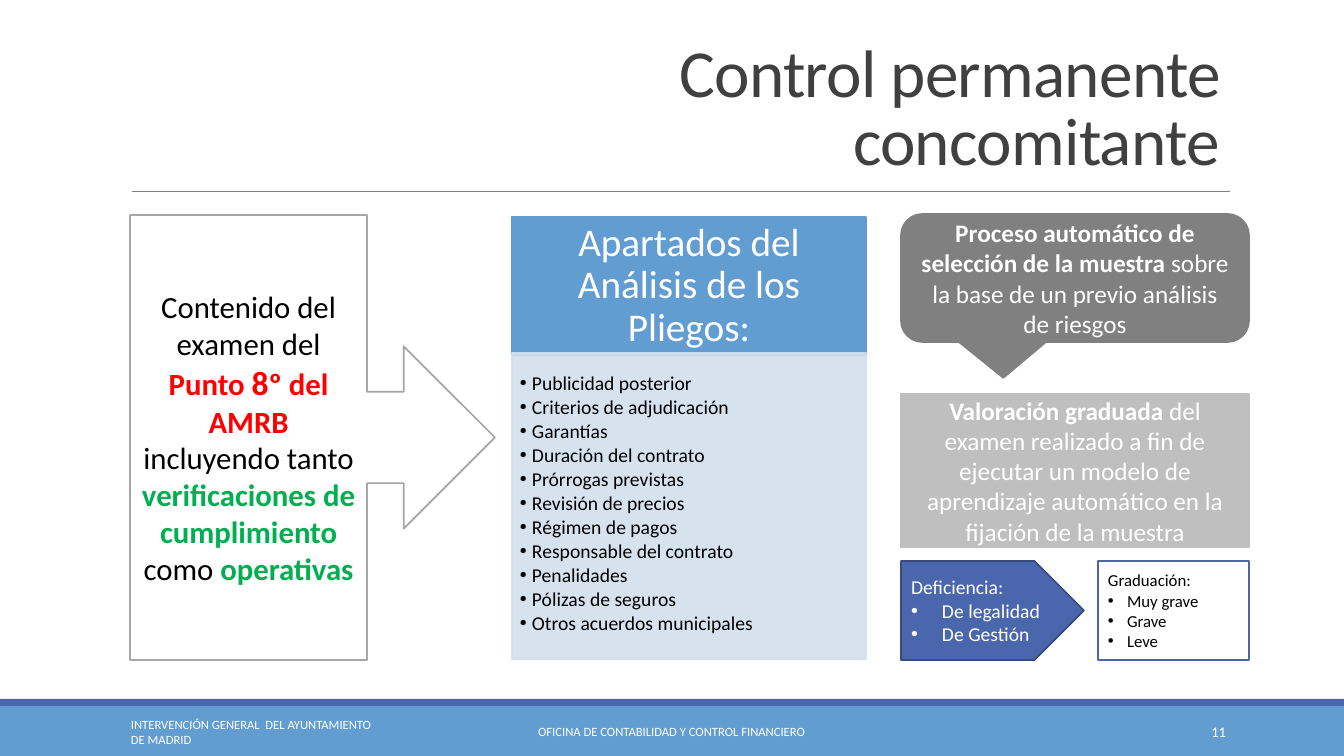
from pptx import Presentation
from pptx.dml.color import RGBColor
from pptx.enum.shapes import MSO_CONNECTOR, MSO_SHAPE
from pptx.enum.text import MSO_ANCHOR, PP_ALIGN
from pptx.oxml.ns import qn
from pptx.util import Pt
from lxml.etree import SubElement

PX = 914400 / 100.8
WIDTH, HEIGHT = 1344, 756

WHITE = RGBColor(0xFF, 0xFF, 0xFF)
BLACK = RGBColor(0, 0, 0)
INK = RGBColor(0x40, 0x40, 0x40)
GREY = RGBColor(0x80, 0x80, 0x80)
MID_GREY = RGBColor(0xA6, 0xA6, 0xA6)
LIGHT_GREY = RGBColor(0xBF, 0xBF, 0xBF)
SKY = RGBColor(0x62, 0x9D, 0xD1)
PALE = RGBColor(0xD3, 0xDF, 0xEE)
INDIGO = RGBColor(0x4A, 0x66, 0xAC)
NAVY = RGBColor(0x37, 0x4B, 0x7F)
RED = RGBColor(0xFF, 0, 0)
GREEN = RGBColor(0, 0xB0, 0x50)

SECTIONS = [
    "Publicidad posterior", "Criterios de adjudicación", "Garantías",
    "Duración del contrato", "Prórrogas previstas", "Revisión de precios",
    "Régimen de pagos", "Responsable del contrato", "Penalidades",
    "Pólizas de seguros", "Otros acuerdos municipales",
]


def emu(*lengths):
    return [round(length * PX) for length in lengths]


def write(shape, paragraphs, size, color=BLACK, align=PP_ALIGN.CENTER, insets=(10, 5, 10, 5),
          spacing=None, after=0, indent=0, first_bullet=0, tracking=0):
    """Each paragraph is a string or a list of (text, run format) pairs."""
    frame = shape.text_frame
    frame.word_wrap = True
    frame.vertical_anchor = MSO_ANCHOR.MIDDLE
    (frame.margin_left, frame.margin_top,
     frame.margin_right, frame.margin_bottom) = emu(*insets)
    for number, runs in enumerate(paragraphs):
        paragraph = frame.paragraphs[0] if number == 0 else frame.add_paragraph()
        paragraph.alignment = align
        paragraph.space_after = Pt(after)
        if spacing:
            paragraph.line_spacing = spacing
        if indent and number >= first_bullet:
            properties = paragraph._p.get_or_add_pPr()
            hang = emu(indent)[0]
            properties.set("marL", str(hang))
            properties.set("indent", str(-hang))
            SubElement(properties, qn("a:buFont")).set("typeface", "Arial")
            SubElement(properties, qn("a:buChar")).set("char", "•")
        for text, look in [(runs, {})] if isinstance(runs, str) else runs:
            run = paragraph.add_run()
            run.text = text
            run.font.name = "Calibri"
            run.font.size = Pt(look.get("size", size))
            run.font.bold = look.get("bold", False)
            run.font.color.rgb = look.get("color", color)
            if tracking:
                run._r.get_or_add_rPr().set("spc", str(tracking))


def add_text(slide, box, paragraphs, **look):
    write(slide.shapes.add_textbox(*emu(*box)), paragraphs, **look)


def add_block(slide, kind, box, fill, line=None, alpha=None):
    block = slide.shapes.add_shape(kind, *emu(*box))
    block.shadow.inherit = False
    block.fill.solid()
    block.fill.fore_color.rgb = fill
    if line is None:
        block.line.fill.background()
    else:
        block.line.color.rgb = line
        block.line.width = Pt(1.25)
    if alpha:
        for color in block._element.spPr.iter(qn("a:srgbClr")):
            SubElement(color, qn("a:alpha")).set("val", str(alpha * 1000))
    return block


def add_heading(slide, box):
    left, top, width, height = box
    rule = slide.shapes.add_connector(
        MSO_CONNECTOR.STRAIGHT, *emu(left, top + height, left + width, top + height))
    rule.line.color.rgb = GREY
    rule.line.width = Pt(0.5)
    SubElement(rule._element.spPr, qn("a:effectLst"))
    title_width = 758
    add_text(slide, (left + width - title_width, top, title_width, height),
             ["Control permanente concomitante"], size=48, color=INK,
             align=PP_ALIGN.RIGHT, spacing=0.85, tracking=-50)


def add_footer(slide, box):
    left, top, width, height = box
    stripe = 7
    add_block(slide, MSO_SHAPE.RECTANGLE, (left, top + stripe, width, height - stripe), SKY)
    add_block(slide, MSO_SHAPE.RECTANGLE, (left, top, width, stripe), INDIGO)
    for offset, span, text, size, align in [
        (121, 272, "INTERVENCIÓN GENERAL  DEL AYUNTAMIENTO DE MADRID", 9, PP_ALIGN.LEFT),
        (406, 531, "OFICINA DE CONTABILIDAD Y CONTROL FINANCIERO", 9, PP_ALIGN.CENTER),
        (1092, 144, "11", 10.5, PP_ALIGN.RIGHT),
    ]:
        add_text(slide, (left + offset, top + 13, span, 40), [text],
                 size=size, color=WHITE, align=align)


def add_exam_content(slide, box):
    callout = add_block(slide, MSO_SHAPE.RIGHT_ARROW_CALLOUT, box, WHITE, MID_GREY)
    red = {"color": RED, "bold": True}
    green = {"color": GREEN, "bold": True}
    write(callout, [[
        ("Contenido del examen del ", {}), ("Punto ", red), ("8", {**red, "size": 24}),
        ("º del AMRB ", red), ("incluyendo tanto ", {}),
        ("verificaciones de cumplimiento ", green), ("como", {}), (" operativas", green),
    ]], size=22)


def add_sections(slide, box):
    left, top, width, height = box
    list_top = 136
    header = add_block(slide, MSO_SHAPE.RECTANGLE, (left, top, width, 138), SKY, SKY)
    write(header, ["Apartados del", "Análisis de los Pliegos:"], size=28, color=WHITE,
          insets=(22, 12, 22, 12), spacing=0.9)
    body = add_block(slide, MSO_SHAPE.RECTANGLE,
                     (left, top + list_top, width, height - list_top), PALE, PALE, alpha=90)
    write(body, SECTIONS, size=14, align=PP_ALIGN.LEFT, insets=(8, 8, 11, 12),
          spacing=0.9, after=2, indent=12)


def add_sampling(slide, box):
    left, top, width, height = box
    bold = {"bold": True}

    # Sample selection and graded assessment
    process = add_block(slide, MSO_SHAPE.ROUNDED_RECTANGULAR_CALLOUT,
                        (left, top, width, 128), GREY, GREY)
    for index, value in enumerate((-0.206, 0.78, 0.167)):
        process.adjustments[index] = value
    write(process, [[("Proceso automático de selección de la muestra ", bold),
                     ("sobre la base de un previo análisis de riesgos", {})]],
          size=18, color=WHITE)
    assessment = add_block(slide, MSO_SHAPE.RECTANGLE, (left, top + 180, width, 153),
                           LIGHT_GREY, LIGHT_GREY)
    write(assessment, [[("Valoración graduada ", bold),
                        ("del examen realizado a fin de ejecutar un modelo de "
                         "aprendizaje automático en la fijación de la muestra", {})]],
          size=18, color=WHITE)

    # Deficiency and its grades
    row_height, grades_width = 99, 151
    row_top = top + height - row_height
    grades = add_block(slide, MSO_SHAPE.RECTANGLE,
                       (left + width - grades_width, row_top, grades_width, row_height),
                       WHITE, INDIGO)
    write(grades, ["Graduación:", "Muy grave", "Grave", "Leve"], size=12,
          align=PP_ALIGN.LEFT, indent=19, first_bullet=1)
    deficiency = add_block(slide, MSO_SHAPE.PENTAGON, (left, row_top, 183, row_height),
                           INDIGO, NAVY)
    write(deficiency, ["Deficiencia:", "De legalidad", "De Gestión"], size=14, color=WHITE,
          align=PP_ALIGN.LEFT, indent=31, first_bullet=1)


def main():
    deck = Presentation()
    deck.slide_width, deck.slide_height = emu(WIDTH, HEIGHT)
    slide = deck.slides.add_slide(deck.slide_layouts[6])
    add_footer(slide, (0, 699, WIDTH, 57))
    add_heading(slide, (132, 31, 1098, 160))
    add_sections(slide, (512, 217, 354, 442))
    add_exam_content(slide, (130, 215, 365, 445))
    add_sampling(slide, (901, 214, 348, 446))
    deck.save("out.pptx")


if __name__ == "__main__":
    main()
